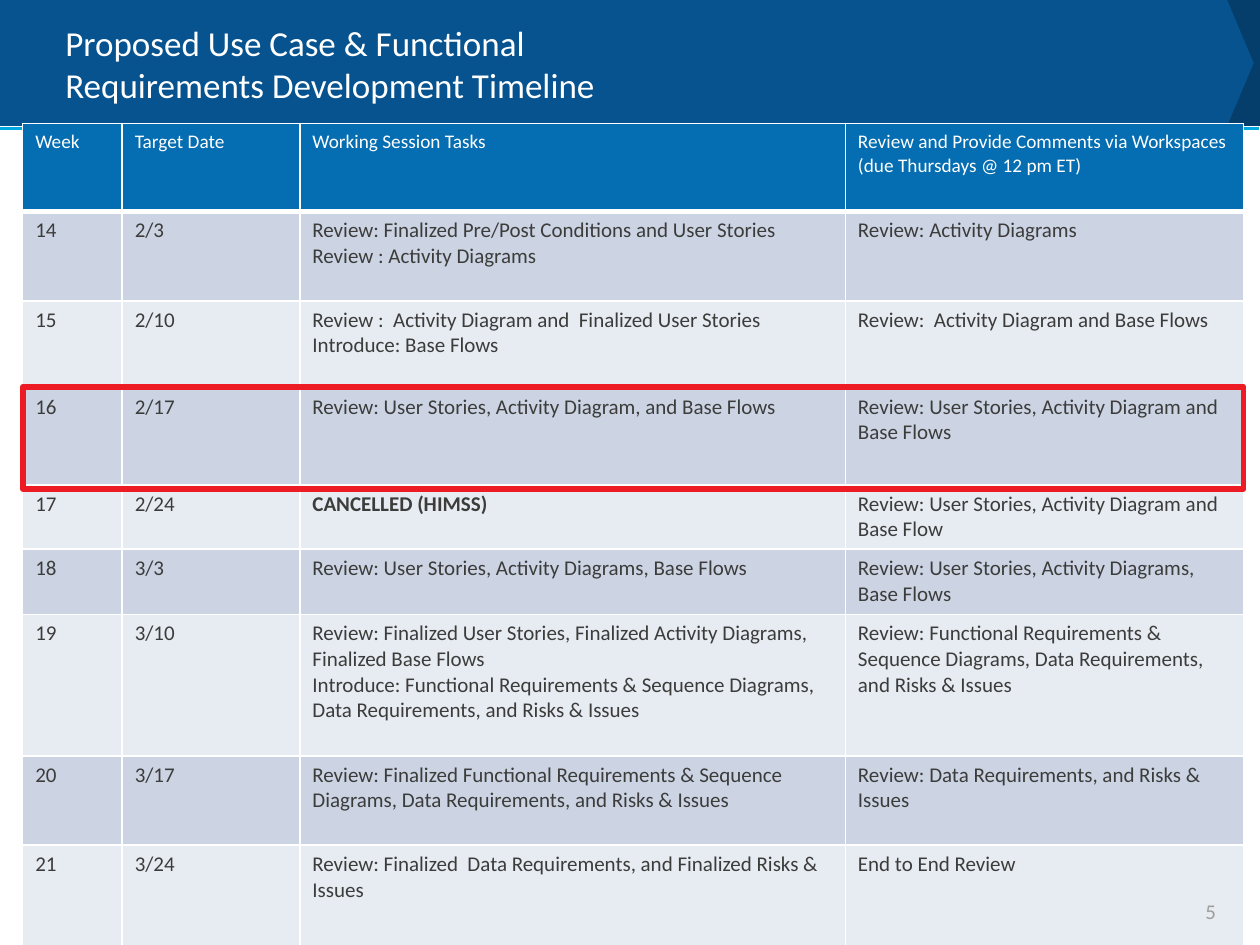
from dataclasses import dataclass

from lxml.etree import SubElement
from pptx import Presentation
from pptx.dml.color import RGBColor
from pptx.enum.shapes import MSO_CONNECTOR, MSO_SHAPE
from pptx.enum.text import MSO_ANCHOR, PP_ALIGN
from pptx.oxml.ns import qn
from pptx.util import Inches, Pt


@dataclass(frozen=True)
class Theme:
    """Colours, typeface and type sizes of the slide."""
    font: str = "Calibri"
    white: str = "FFFFFF"
    banner: str = "07538F"
    banner_end: str = "053E6B"
    accent: str = "00A8E1"
    header: str = "056DB1"
    bands: tuple = ("CCD4E4", "E7EBF2")
    ink: str = "3C3C3B"
    muted: str = "9E9E9C"
    highlight: str = "ED1C24"
    title_size: float = 20
    header_size: float = 11
    body_size: float = 12


THEME = Theme()
TABLE_LEFT, TABLE_TOP = 0.18, 0.98
COLUMN_WIDTHS = (0.79, 1.41, 4.33, 3.16)
ROW_HEIGHTS = (0.7, 0.71, 0.69, 0.77, 0.51, 0.52, 1.12, 0.71, 0.81)
CANCELLED = "CANCELLED (HIMSS)"
TIMELINE = (
    ("Week", "Target Date", "Working Session Tasks",
     "Review and Provide Comments via Workspaces (due Thursdays @ 12 pm ET)"),
    ("14", "2/3",
     "Review: Finalized Pre/Post Conditions and User Stories\nReview : Activity Diagrams",
     "Review: Activity Diagrams"),
    ("15", "2/10",
     "Review :  Activity Diagram and  Finalized User Stories\nIntroduce: Base Flows",
     "Review:  Activity Diagram and Base Flows"),
    ("16", "2/17", "Review: User Stories, Activity Diagram, and Base Flows",
     "Review: User Stories, Activity Diagram and Base Flows"),
    ("17", "2/24", CANCELLED,
     "Review: User Stories, Activity Diagram and Base Flow"),
    ("18", "3/3", "Review: User Stories, Activity Diagrams, Base Flows",
     "Review: User Stories, Activity Diagrams, Base Flows"),
    ("19", "3/10",
     "Review: Finalized User Stories, Finalized Activity Diagrams, Finalized Base Flows\n"
     "Introduce: Functional Requirements & Sequence Diagrams, Data Requirements, "
     "and Risks & Issues",
     "Review: Functional Requirements & Sequence Diagrams, Data Requirements, "
     "and Risks & Issues"),
    ("20", "3/17",
     "Review: Finalized Functional Requirements & Sequence Diagrams, "
     "Data Requirements, and Risks & Issues",
     "Review: Data Requirements, and Risks & Issues"),
    ("21", "3/24", "Review: Finalized  Data Requirements, and Finalized Risks & Issues",
     "End to End Review"),
)


def write_text(frame, text, *, size, color, bold=False, align=PP_ALIGN.LEFT):
    """Write each line of text as a formatted paragraph."""
    frame.word_wrap = True
    for index, line in enumerate(text.split("\n")):
        para = frame.add_paragraph() if index else frame.paragraphs[0]
        para.alignment = align
        for part, words in enumerate(line.split("\v")):
            if part:
                para.add_line_break()
            span = para.add_run()
            span.text = words
            span.font.name = THEME.font
            span.font.size = Pt(size)
            span.font.bold = bold
            span.font.color.rgb = RGBColor.from_string(color)


def add_text(slide, bounds, text, **style):
    """Add a vertically centred text box."""
    box = slide.shapes.add_textbox(*map(Inches, bounds))
    box.text_frame.vertical_anchor = MSO_ANCHOR.MIDDLE
    write_text(box.text_frame, text, **style)


def add_banner_shape(slide, bounds, color, point):
    """Add a filled pentagon whose point is a share of its height."""
    shape = slide.shapes.add_shape(MSO_SHAPE.PENTAGON, *map(Inches, bounds))
    shape.adjustments[0] = point
    shape.shadow.inherit = False
    shape.fill.solid()
    shape.fill.fore_color.rgb = RGBColor.from_string(color)
    shape.line.fill.background()


def add_rule(slide, left, right, top):
    """Add the accent line under the banner."""
    rule = slide.shapes.add_connector(
        MSO_CONNECTOR.STRAIGHT, *map(Inches, (left, top, right, top)))
    rule.line.color.rgb = RGBColor.from_string(THEME.accent)
    rule.line.width = Pt(2.25)
    SubElement(rule._element.spPr, qn("a:effectLst"))


def set_borders(cell, top, bottom):
    """Give a cell white borders, with widths in points above and below."""
    properties = cell._tc.get_or_add_tcPr()
    for side, width in (("L", 1), ("R", 1), ("T", top), ("B", bottom)):
        border = SubElement(properties, qn(f"a:ln{side}"), w=str(Pt(width)))
        fill = SubElement(border, qn("a:solidFill"))
        SubElement(fill, qn("a:srgbClr"), val=THEME.white)


def add_timeline(slide):
    """Add the timeline table with a header and banded rows."""
    size = sum(COLUMN_WIDTHS), sum(ROW_HEIGHTS)
    table = slide.shapes.add_table(
        len(ROW_HEIGHTS), len(COLUMN_WIDTHS),
        *map(Inches, (TABLE_LEFT, TABLE_TOP, *size))).table
    for column, width in zip(table.columns, COLUMN_WIDTHS):
        column.width = Inches(width)
    for index, (row, height, texts) in enumerate(zip(table.rows, ROW_HEIGHTS, TIMELINE)):
        row.height = Inches(height)
        is_header = index == 0
        fill = THEME.header if is_header else THEME.bands[(index - 1) % 2]
        for cell, text in zip(row.cells, texts):
            set_borders(cell, 3 if index == 1 else 1, 3 if is_header else 1)
            cell.fill.solid()
            cell.fill.fore_color.rgb = RGBColor.from_string(fill)
            write_text(cell.text_frame, text, bold=text == CANCELLED,
                       size=THEME.header_size if is_header else THEME.body_size,
                       color=THEME.white if is_header else THEME.ink)


def add_highlight(slide, bounds):
    """Outline the current week."""
    frame = slide.shapes.add_shape(MSO_SHAPE.RECTANGLE, *map(Inches, bounds))
    frame.shadow.inherit = False
    frame.fill.background()
    frame.line.color.rgb = RGBColor.from_string(THEME.highlight)
    frame.line.width = Pt(3.25)
    SubElement(frame.get_or_add_ln(), qn("a:round"))


def main():
    """Build and save the timeline slide."""
    deck = Presentation()
    deck.slide_width, deck.slide_height = Inches(10), Inches(7.5)
    page = deck.slides.add_slide(deck.slide_layouts[6])
    add_banner_shape(page, (9.55, 0, 0.45, 1), THEME.banner_end, 0)
    add_banner_shape(page, (0, 0, 9.95, 1), THEME.banner, 0.211)
    add_rule(page, 0, 9.99, 1.02)
    add_text(page, (0.42, 0.08, 9.17, 0.85),
             "Proposed Use Case & Functional \vRequirements Development Timeline",
             size=THEME.title_size, color=THEME.white)
    add_timeline(page)
    add_text(page, (7.42, 7.11, 2.33, 0.25), "5", size=THEME.body_size,
             color=THEME.muted, align=PP_ALIGN.RIGHT)
    add_highlight(page, (TABLE_LEFT, 3.07, sum(COLUMN_WIDTHS), 0.81))
    deck.save("out.pptx")


if __name__ == "__main__":
    main()
